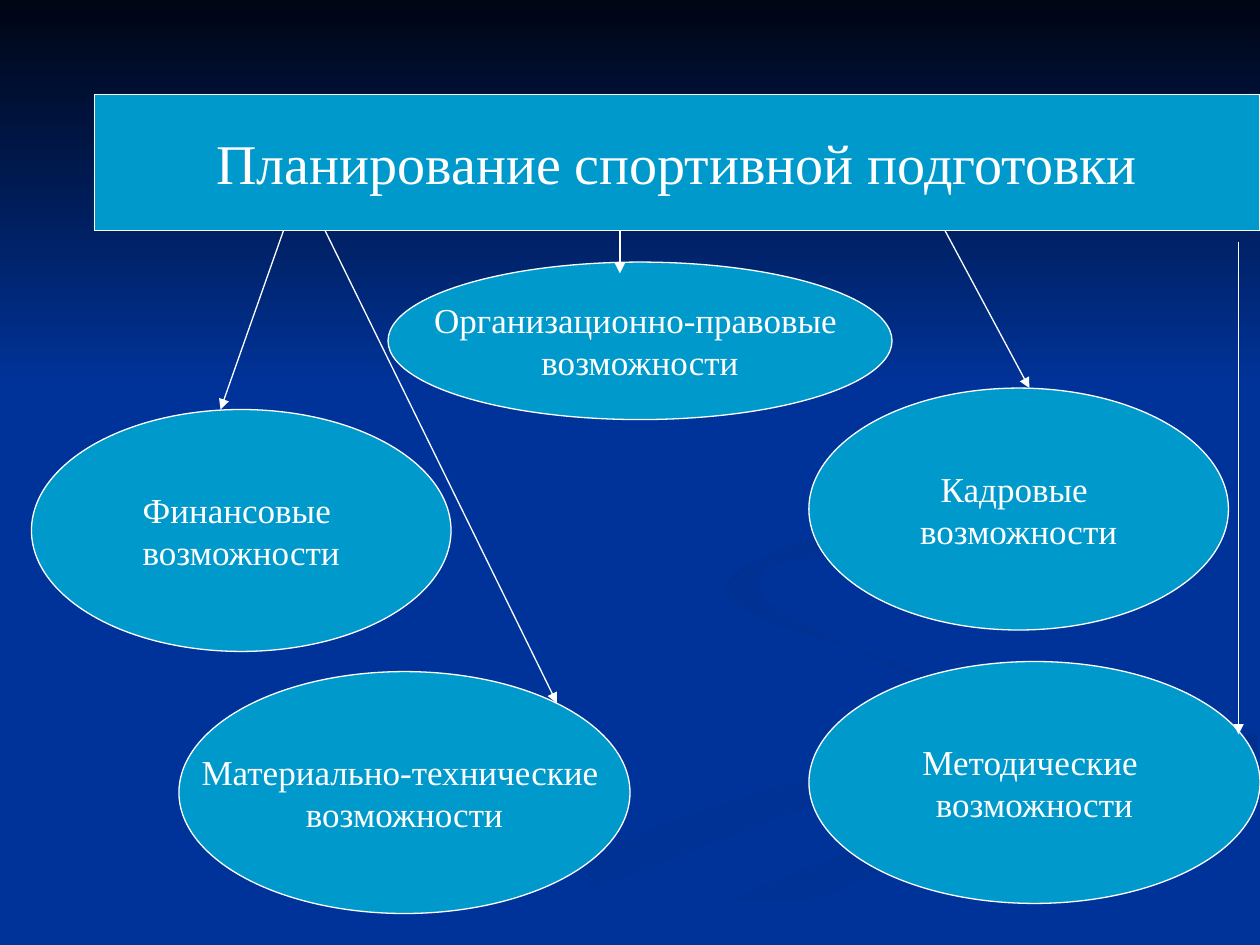
from typing import NamedTuple

from lxml import etree
from pptx import Presentation
from pptx.dml.color import RGBColor
from pptx.enum.shapes import MSO_CONNECTOR, MSO_SHAPE
from pptx.enum.text import MSO_ANCHOR, PP_ALIGN
from pptx.oxml.ns import qn
from pptx.util import Inches, Pt

RECT, OVAL = MSO_SHAPE.RECTANGLE, MSO_SHAPE.OVAL
STRAIGHT = MSO_CONNECTOR.STRAIGHT
MIDDLE, CENTER = MSO_ANCHOR.MIDDLE, PP_ALIGN.CENTER

COLORS = {
    "night": "000514",
    "blue": "003399",
    "shade": "002F8E",
    "soft_shade": "003193",
    "box": "0099CC",
    "white": "FFFFFF",
}
FONT = "Times New Roman"
LINE_WIDTH = Pt(0.75)
BAR_BOTTOM = 1.83
CURVE_STEPS = 6

Point = tuple[float, float]


class Box(NamedTuple):
    kind: int
    left: float
    top: float
    width: float
    height: float
    lines: tuple[str, ...]
    size: int = 20


class Arrow(NamedTuple):
    x1: float
    y1: float
    x2: float
    y2: float


class Swirl(NamedTuple):
    """Background ribbon between two curved edges; angle runs clockwise."""
    start: str
    end: str
    angle: int
    edges: tuple[tuple[Point, ...], ...]


SWIRLS = [
    Swirl("blue", "soft_shade", 0, (
        ((5.75, 4.6), (6.02, 4.9), (7.15, 5.28), (8, 5.8), (6.23, 6.47), (3.61, 7.49)),
        ((3, 7.49), (5.39, 6.49), (7.85, 5.7), (6.97, 5.25), (5.75, 4.6)))),
    Swirl("shade", "blue", 90, (
        ((5.03, 7.49), (6.96, 6.69), (9.98, 5.81)),
        ((9.98, 6.09), (7.52, 6.72), (5.71, 7.49)))),
    Swirl("shade", "blue", 45, (
        ((7.62, 2.33), (8.93, 3.35), (7.12, 4.26), (6.06, 4.52), (6.22, 5)),
        ((6.22, 5), (5.77, 4.62), (6.76, 4.14), (8.89, 3.35), (7.62, 2.33)))),
    Swirl("night", "blue", 90, (((0, 0), (10, 0)), ((10, 3.08), (0, 3.08)))),
]

POSSIBILITIES = "возможности"
BOXES = [
    Box(RECT, 0.75, 0.75, 9.25, 1.08, ("Планирование спортивной подготовки",), 32),
    Box(OVAL, 0.25, 3.25, 3.33, 1.92, ("Финансовые ", POSSIBILITIES)),
    Box(OVAL, 6.42, 3.08, 3.33, 1.92, ("Кадровые ", POSSIBILITIES)),
    Box(OVAL, 1.42, 5.33, 3.58, 1.92, ("Материально-технические ", POSSIBILITIES)),
    Box(OVAL, 6.42, 5.25, 3.58, 1.92, ("Методические ", POSSIBILITIES)),
    Box(OVAL, 3.08, 2.08, 4, 1.25, ("Организационно-правовые ", POSSIBILITIES)),
]

ARROWS = [
    Arrow(4.92, BAR_BOTTOM, 4.92, 2.17),
    Arrow(2.25, BAR_BOTTOM, 1.75, 3.25),
    Arrow(7.5, BAR_BOTTOM, 8.17, 3.08),
    Arrow(2.58, BAR_BOTTOM, 4.42, 5.58),
    Arrow(9.83, 1.92, 9.83, 5.83),
]


def color(name: str) -> RGBColor:
    return RGBColor.from_string(COLORS[name])


def smooth(edge: tuple[Point, ...]) -> list[Point]:
    """Run a Catmull-Rom curve through the points of an open edge."""
    padded = [edge[0], *edge, edge[-1]]
    curve = [edge[0]]
    for quad in zip(padded, padded[1:], padded[2:], padded[3:]):
        for step in range(1, CURVE_STEPS + 1):
            t = step / CURVE_STEPS
            curve.append(tuple(
                b + t * (c - a) / 2
                + t**2 * (2 * a - 5 * b + 4 * c - d) / 2
                + t**3 * (3 * b - a - 3 * c + d) / 2
                for a, b, c, d in zip(*quad)))
    return curve


def draw_swirl(shapes, swirl: Swirl) -> None:
    first, *rest = [(Inches(x), Inches(y))
                    for edge in swirl.edges for x, y in smooth(edge)]
    builder = shapes.build_freeform(*first, scale=1.0)
    builder.add_line_segments(rest, close=True)
    s = builder.convert_to_shape()
    s.shadow.inherit = False
    s.line.fill.background()
    s.fill.gradient()
    s.fill.gradient_angle = -swirl.angle % 360
    for stop, name in zip(s.fill.gradient_stops, (swirl.start, swirl.end)):
        stop.color.rgb = color(name)


def draw_box(shapes, box: Box) -> None:
    s = shapes.add_shape(box.kind, Inches(box.left), Inches(box.top),
                         Inches(box.width), Inches(box.height))
    s.shadow.inherit = False
    s.fill.solid()
    s.fill.fore_color.rgb = color("box")
    s.line.color.rgb = color("white")
    s.line.width = LINE_WIDTH
    tf = s.text_frame
    tf.word_wrap = False
    tf.vertical_anchor = MIDDLE
    for i, line in enumerate(box.lines):
        p = tf.add_paragraph() if i else tf.paragraphs[0]
        p.alignment = CENTER
        r = p.add_run()
        r.text = line
        for name, value in {"name": FONT, "size": Pt(box.size)}.items():
            setattr(r.font, name, value)
        r.font.color.rgb = color("white")


def draw_arrow(shapes, arrow: Arrow) -> None:
    s = shapes.add_connector(STRAIGHT, *(Inches(v) for v in arrow))
    s.line.color.rgb = color("white")
    s.line.width = LINE_WIDTH
    props = s._element.spPr
    etree.SubElement(props.find(qn("a:ln")), qn("a:tailEnd"), type="triangle")
    etree.SubElement(props, qn("a:effectLst"))


def main() -> None:
    prs = Presentation()
    prs.slide_width, prs.slide_height = Inches(10), Inches(7.5)
    slide = prs.slides.add_slide(prs.slide_layouts[6])
    slide.background.fill.solid()
    slide.background.fill.fore_color.rgb = color("blue")
    for draw, items in ((draw_swirl, SWIRLS), (draw_box, BOXES), (draw_arrow, ARROWS)):
        for item in items:
            draw(slide.shapes, item)
    prs.save("out.pptx")


if __name__ == "__main__":
    main()
